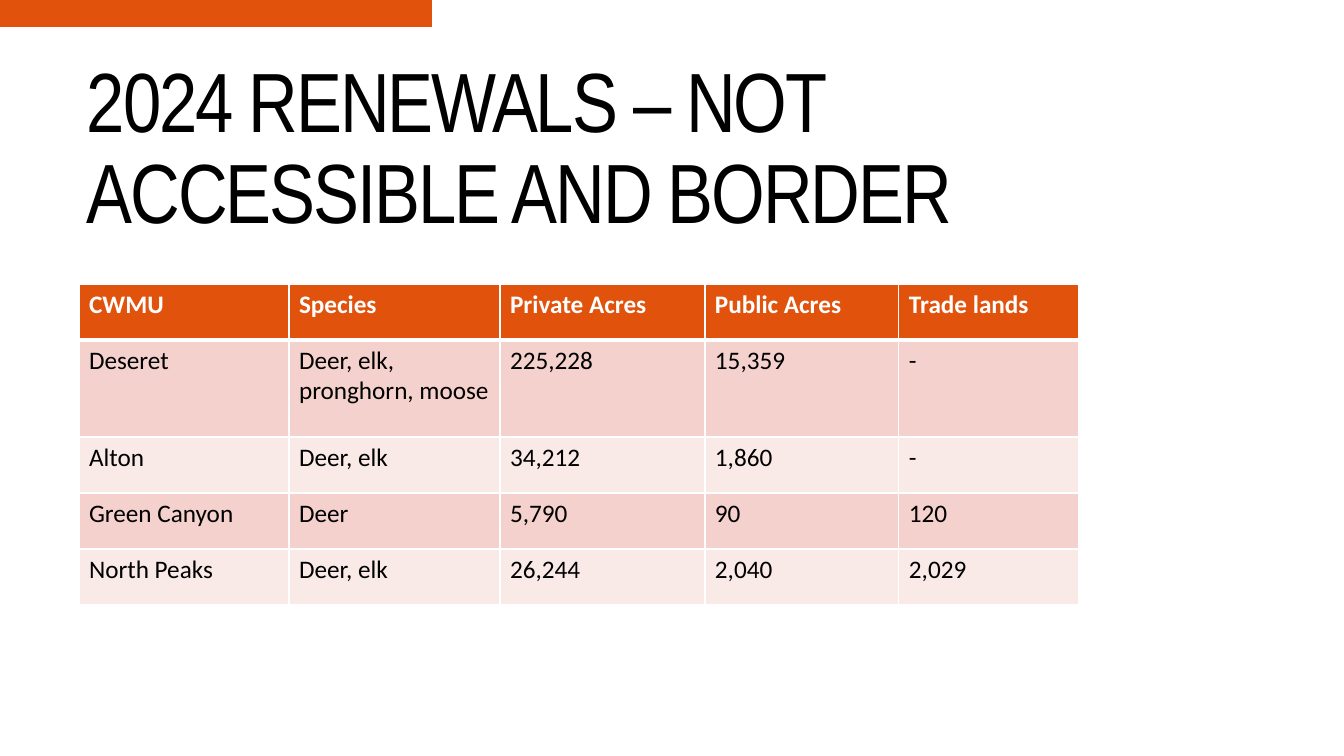
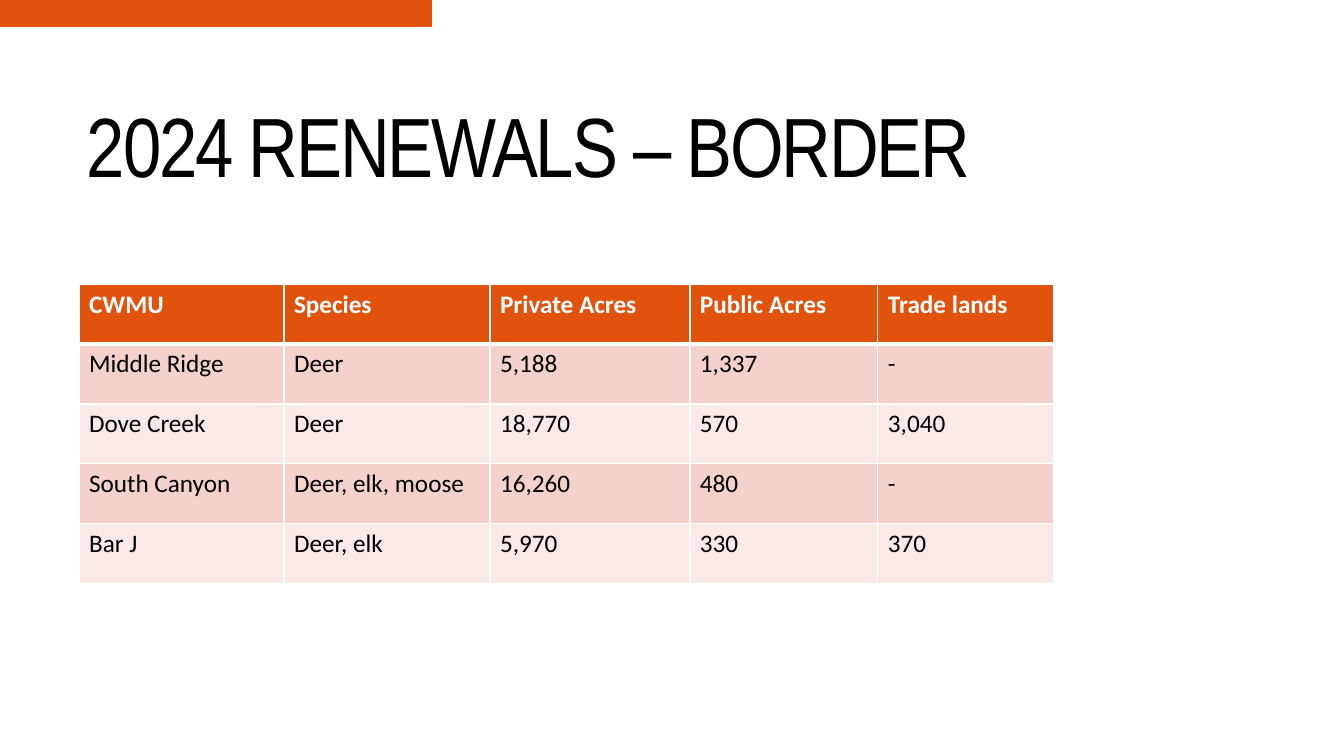
from lxml.etree import SubElement
from pptx import Presentation
from pptx.dml.color import RGBColor
from pptx.enum.shapes import MSO_SHAPE
from pptx.enum.text import MSO_ANCHOR
from pptx.oxml.ns import qn
from pptx.util import Emu, Pt

ORANGE = RGBColor(0xE1, 0x53, 0x0D)
ROSE = RGBColor(0xF4, 0xD1, 0xCC)
BLUSH = RGBColor(0xF9, 0xE9, 0xE7)
WHITE = RGBColor(0xFF, 0xFF, 0xFF)
BLACK = RGBColor(0x00, 0x00, 0x00)

HEAD = ("CWMU", "Species", "Private Acres", "Public Acres", "Trade lands")
PAGES = (
    {
        "title": "2024 RENEWALS – NOT ACCESSIBLE AND BORDER",
        "cols": (210, 211, 205, 194, 180),
        "rows": (56, 97, 56, 56, 56),
        "data": (
            ("Deseret", "Deer, elk, pronghorn, moose", "225,228", "15,359", "-"),
            ("Alton", "Deer, elk", "34,212", "1,860", "-"),
            ("Green Canyon", "Deer", "5,790", "90", "120"),
            ("North Peaks", "Deer, elk", "26,244", "2,040", "2,029"),
        ),
    },
    {
        "title": "2024 RENEWALS – BORDER",
        "cols": (205, 206, 200, 188, 176),
        "rows": (60,) * 5,
        "data": (
            ("Middle Ridge", "Deer", "5,188", "1,337", "-"),
            ("Dove Creek", "Deer", "18,770", "570", "3,040"),
            ("South Canyon", "Deer, elk, moose", "16,260", "480", "-"),
            ("Bar J", "Deer, elk", "5,970", "330", "370"),
        ),
    },
)


def px(n):
    return Emu(round(n * 914400 / 100.8))


def write(frame, text, font="Calibri", size=18, color=BLACK, bold=False,
          lead=None, track=None):
    """Fill a text frame; track is letter spacing in points."""
    para = frame.paragraphs[0]
    para.line_spacing = lead
    run = para.add_run()
    run.text = text
    run.font.name = font
    run.font.size = Pt(size)
    run.font.bold = bold
    run.font.color.rgb = color
    if track is not None:
        run.font._element.set("spc", str(round(track * 100)))


def edge(cell, side, width):
    """Draw one white cell border; side is L, R, T or B."""
    line = SubElement(cell._tc.get_or_add_tcPr(), qn("a:ln" + side),
                      w=str(Pt(width)))
    fill = SubElement(line, qn("a:solidFill"))
    SubElement(fill, qn("a:srgbClr"), val=str(WHITE))


class Deck:
    def __init__(self):
        self.file = Presentation()
        self.file.slide_width = px(1344)
        self.file.slide_height = px(756)
        self.slide = None

    def page(self, title):
        self.slide = self.file.slides.add_slide(self.file.slide_layouts[6])
        self.band()
        self.title(title)

    def band(self):
        bar = self.slide.shapes.add_shape(MSO_SHAPE.RECTANGLE, 0, 0,
                                          px(432), px(27))
        bar.shadow.inherit = False
        bar.fill.solid()
        bar.fill.fore_color.rgb = ORANGE
        bar.line.fill.background()

    def title(self, text):
        box = self.slide.shapes.add_textbox(px(77), px(32), px(1103), px(237))
        frame = box.text_frame
        frame.word_wrap = True
        frame.vertical_anchor = MSO_ANCHOR.MIDDLE
        write(frame, text, font="Arial Narrow", size=60, lead=0.9, track=-1.5)

    def table(self, cols, rows, data):
        grid = self.slide.shapes.add_table(
            len(rows), len(cols), px(79), px(284),
            px(sum(cols)), px(sum(rows))).table
        grid.horz_banding = False
        for col, width in zip(grid.columns, cols):
            col.width = px(width)
        for r, (row, high) in enumerate(zip(grid.rows, rows)):
            row.height = px(high)
            for cell, text in zip(row.cells, data[r]):
                self.cell(cell, text, r)

    def cell(self, cell, text, r):
        head = r == 0
        widths = {"L": 1, "R": 1, "T": 3 if r == 1 else 1, "B": 3 if head else 1}
        for side, width in widths.items():
            edge(cell, side, width)
        cell.fill.solid()
        cell.fill.fore_color.rgb = ORANGE if head else ROSE if r % 2 else BLUSH
        write(cell.text_frame, text, color=WHITE if head else BLACK, bold=head)


def main():
    deck = Deck()
    for item in PAGES:
        deck.page(item["title"])
        deck.table(item["cols"], item["rows"], (HEAD, *item["data"]))
    deck.file.save("out.pptx")


if __name__ == "__main__":
    main()
